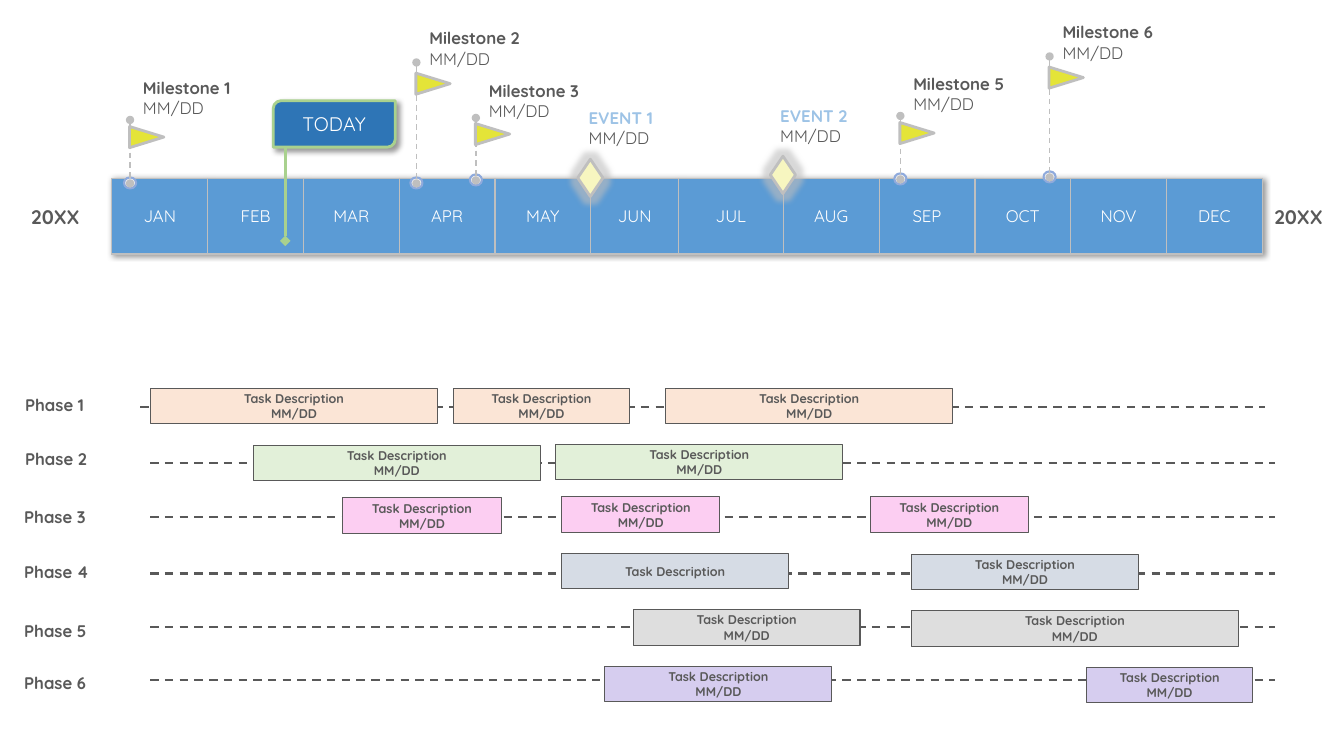
"""Build a year timeline slide with milestones, events and phased tasks."""
from dataclasses import dataclass

from lxml import etree
from pptx import Presentation
from pptx.dml.color import RGBColor
from pptx.enum.dml import MSO_LINE
from pptx.enum.shapes import MSO_CONNECTOR, MSO_SHAPE
from pptx.enum.text import MSO_ANCHOR, MSO_AUTO_SIZE, PP_ALIGN
from pptx.oxml.ns import qn
from pptx.util import Inches, Pt

DASH = MSO_LINE.DASH
STRAIGHT = MSO_CONNECTOR.STRAIGHT
BAR, DOT = MSO_SHAPE.RECTANGLE, MSO_SHAPE.OVAL
FLAG, GEM = MSO_SHAPE.ISOSCELES_TRIANGLE, MSO_SHAPE.FLOWCHART_DECISION
CALLOUT = MSO_SHAPE.ROUND_2_DIAG_RECTANGLE
MIDDLE, TOP = MSO_ANCHOR.MIDDLE, MSO_ANCHOR.TOP
LEFT, CENTER = PP_ALIGN.LEFT, PP_ALIGN.CENTER
GROW, FIXED = MSO_AUTO_SIZE.SHAPE_TO_FIT_TEXT, MSO_AUTO_SIZE.NONE


@dataclass(frozen=True)
class Theme:
    """Colours, font and type sizes of the slide."""
    font: str = "Quicksand"
    ink: str = "595959"
    white: str = "FFFFFF"
    shadow: str = "000000"
    month: str = "5B9BD5"
    rule: str = "BFBFBF"
    today: str = "2E75B6"
    pointer: str = "A9D18E"
    dot: str = "F2F2F2"
    ring: str = "8FAADC"
    flag: str = "E4E438"
    gem: str = "F7F6C0"
    event: str = "9DC3E6"
    phases: tuple = ("FBE5D6", "E2F0D9", "FCCEF2", "D6DCE5", "DEDEDE", "D6CDEF")
    task_size: int = 9
    label_size: int = 12
    title_size: int = 14


MONTHS = "JAN FEB MAR APR MAY JUN JUL AUG SEP OCT NOV DEC".split()
MONTH_WIDTHS = {"JUN": 0.87, "JUL": 1.04}
DATE = "MM/DD"
TASK = ("Task Description", DATE)
MILESTONES = [
    ("Milestone 1", 1.29, 1.19, 1.82, 1.19, 0.72),
    ("Milestone 2", 4.13, 0.62, 1.82, 0.66, 0.23),
    ("Milestone 3", 4.72, 1.17, 1.79, 1.16, 0.75),
    ("Milestone 5", 8.93, 1.15, 1.78, 1.15, 0.68),
    ("Milestone 6", 10.41, 0.56, 1.76, 0.6, 0.17),
]
EVENTS = [("EVENT 1", 5.67, 1.64, 5.74, 1.02), ("EVENT 2", 7.58, 1.61, 7.64, 1)]
PHASES = [
    (0.15, 3.87, 1.39, 4.04, [(1.49, 3.85, 2.85, TASK), (4.5, 3.85, 1.74, TASK),
                              (6.6, 3.85, 2.85, TASK)]),
    (0.15, 4.4, 1.49, 4.59, [(2.51, 4.42, 2.85, TASK), (5.51, 4.41, 2.85, TASK)]),
    (0.14, 4.98, 1.49, 5.13, [(3.4, 4.94, 1.57, TASK), (5.57, 4.93, 1.57, TASK),
                              (8.63, 4.93, 1.57, TASK)]),
    (0.14, 5.52, 1.49, 5.69, [(5.57, 5.49, 2.25, TASK[:1]), (9.04, 5.5, 2.25, TASK)]),
    (0.14, 6.11, 1.49, 6.22, [(6.28, 6.05, 2.25, TASK), (9.04, 6.06, 3.24, TASK)]),
    (0.14, 6.62, 1.49, 6.75, [(6, 6.61, 2.25, TASK), (10.78, 6.62, 1.64, TASK)]),
]


class Board:
    """Hold the theme and the current slide, and draw elements on it."""

    def __init__(self, slide, theme):
        self.shapes = slide.shapes
        self.theme = theme

    def style(self, target, values):
        """Set each named value on the target."""
        for name, value in values.items():
            setattr(target, name, value)

    def put_lines(self, frame, lines, size, align=CENTER):
        """Put (text, colour, bold) lines in as paragraphs."""
        for index, (words, colour, bold) in enumerate(lines):
            paragraph = frame.add_paragraph() if index else frame.paragraphs[0]
            paragraph.alignment = align
            run = paragraph.add_run()
            run.text = words
            self.style(run.font, {"name": self.theme.font, "size": Pt(size), "bold": bold})
            run.font.color.rgb = RGBColor.from_string(colour)

    def label(self, box, lines, size, align=LEFT, fit=FIXED):
        """Add a text box."""
        frame = self.shapes.add_textbox(*map(Inches, box)).text_frame
        self.style(frame, {"word_wrap": True, "auto_size": fit, "vertical_anchor": TOP})
        self.put_lines(frame, lines, size, align)

    def effect(self, parent, kind, colour, alpha, **lengths):
        """Add a shadow or glow to an effect list."""
        node = etree.SubElement(parent, qn(f"a:{kind}"),
                                {name: str(int(value)) for name, value in lengths.items()})
        tint = etree.SubElement(node, qn("a:srgbClr"), val=colour)
        etree.SubElement(tint, qn("a:alpha"), val=str(alpha * 1000))

    def shape(self, kind, box, fill, line, width, rotation=0):
        """Add a filled and outlined preset shape."""
        shape = self.shapes.add_shape(kind, *map(Inches, box))
        shape.shadow.inherit = False
        shape.rotation = rotation
        shape.fill.solid()
        shape.fill.fore_color.rgb = RGBColor.from_string(fill)
        shape.line.color.rgb = RGBColor.from_string(line)
        shape.line.width = Pt(width)
        shape.text_frame.vertical_anchor = MIDDLE
        return shape

    def line(self, start, end, colour, width, dash=None, **ends):
        """Add a straight line with optional headEnd and tailEnd marks."""
        connector = self.shapes.add_connector(STRAIGHT, *map(Inches, start + end))
        connector.line.color.rgb = RGBColor.from_string(colour)
        self.style(connector.line, {"width": Pt(width), "dash_style": dash})
        properties = connector.element.spPr
        for name, mark in ends.items():
            etree.SubElement(properties.find(qn("a:ln")), qn(f"a:{name}"), type=mark)
        etree.SubElement(properties, qn("a:effectLst"))

    def calendar(self, left, top, height):
        """Add the row of months as a table."""
        theme = self.theme
        widths = [MONTH_WIDTHS.get(month, 0.95) for month in MONTHS]
        holder = self.shapes.add_table(1, len(MONTHS), Inches(left), Inches(top),
                                       Inches(sum(widths)), Inches(height))
        table = holder.table
        self.style(table, {"first_row": False, "horz_banding": False})
        effects = etree.Element(qn("a:effectLst"))
        self.effect(effects, "outerShdw", theme.shadow, 40,
                    blurRad=Pt(4), dist=Pt(1), dir=2700000)
        holder.element.find(".//" + qn("a:tblPr")).insert(0, effects)
        for column, width, cell, month in zip(table.columns, widths, table.iter_cells(), MONTHS):
            column.width = Inches(width)
            cell.vertical_anchor = MIDDLE
            cell.fill.solid()
            cell.fill.fore_color.rgb = RGBColor.from_string(theme.month)
            self.put_lines(cell.text_frame, [(month, theme.white, False)], theme.label_size)
        for properties in holder.element.iter(qn("a:tcPr")):
            for index, side in enumerate("LRTB"):
                border = etree.Element(qn(f"a:ln{side}"), w=str(int(Pt(1))))
                paint = etree.SubElement(border, qn("a:solidFill"))
                etree.SubElement(paint, qn("a:srgbClr"), val=theme.rule)
                properties.insert(index, border)

    def today(self):
        """Add the callout for the current day and its pointer."""
        theme = self.theme
        callout = self.shape(CALLOUT, (2.71, 1, 1.21, 0.46), theme.today, theme.pointer, 2)
        self.effect(callout.element.spPr.find(qn("a:effectLst")), "outerShdw", theme.shadow, 40,
                    blurRad=Pt(4), dist=Pt(3), dir=2700000)
        self.put_lines(callout.text_frame, [("TODAY", theme.white, False)], theme.title_size)
        self.line((2.83, 1.45), (2.83, 2.39), theme.pointer, 2.5, tailEnd="diamond")

    def milestone(self, name, x, top, foot, flag_top, label_top):
        """Add a flag on a stake with its label."""
        theme = self.theme
        self.label((x + 0.03, label_top, 1.9, 0.49),
                   [(name, theme.ink, True), (DATE, theme.ink, False)], theme.label_size)
        self.shape(DOT, (x - 0.06, foot - 0.06, 0.12, 0.11), theme.dot, theme.ring, 1.5)
        self.line((x, top), (x, foot), theme.rule, 1, DASH, headEnd="oval", tailEnd="oval")
        self.shape(FLAG, (x + 0.06, flag_top, 0.21, 0.34), theme.flag, theme.rule, 2, 90)

    def event(self, name, left, top, label_left, label_top):
        """Add a glowing gem with its label."""
        theme = self.theme
        gem = self.shape(GEM, (left, top, 0.37, 0.25), theme.gem, theme.rule, 2, 90)
        self.effect(gem.element.spPr.find(qn("a:effectLst")), "glow", theme.rule, 60, rad=Pt(8))
        self.label((label_left, label_top, 1.57, 0.44),
                   [(name, theme.event, True), (DATE, theme.ink, False)], theme.label_size)

    def phase(self, number, colour, left, top, start, y, tasks):
        """Add a dashed lane with its label and task bars."""
        theme = self.theme
        self.line((start, y), (start + 11.16, y), theme.ink, 1.5, DASH)
        self.label((left, top, 1.72, 0.3), [(f"Phase {number}", theme.ink, True)],
                   theme.label_size, fit=GROW)
        for task_left, task_top, width, lines in tasks:
            bar = self.shape(BAR, (task_left, task_top, width, 0.35), colour, theme.ink, 0.75)
            self.put_lines(bar.text_frame, [(words, theme.ink, True) for words in lines],
                           theme.task_size)


def main():
    """Draw the timeline and save it."""
    deck = Presentation()
    deck.slide_width, deck.slide_height = Inches(13.33), Inches(7.5)
    theme = Theme()
    board = Board(deck.slides.add_slide(deck.slide_layouts[6]), theme)
    board.calendar(1.11, 1.77, 0.75)
    board.today()
    for year_left in (0.2, 12.53):
        board.label((year_left, 1.98, 0.7, 0.34), [("20XX", theme.ink, True)],
                    theme.title_size, CENTER, GROW)
    for milestone in MILESTONES:
        board.milestone(*milestone)
    for event in EVENTS:
        board.event(*event)
    for number, (colour, lane) in enumerate(zip(theme.phases, PHASES), 1):
        board.phase(number, colour, *lane)
    deck.save("out.pptx")


if __name__ == "__main__":
    main()
